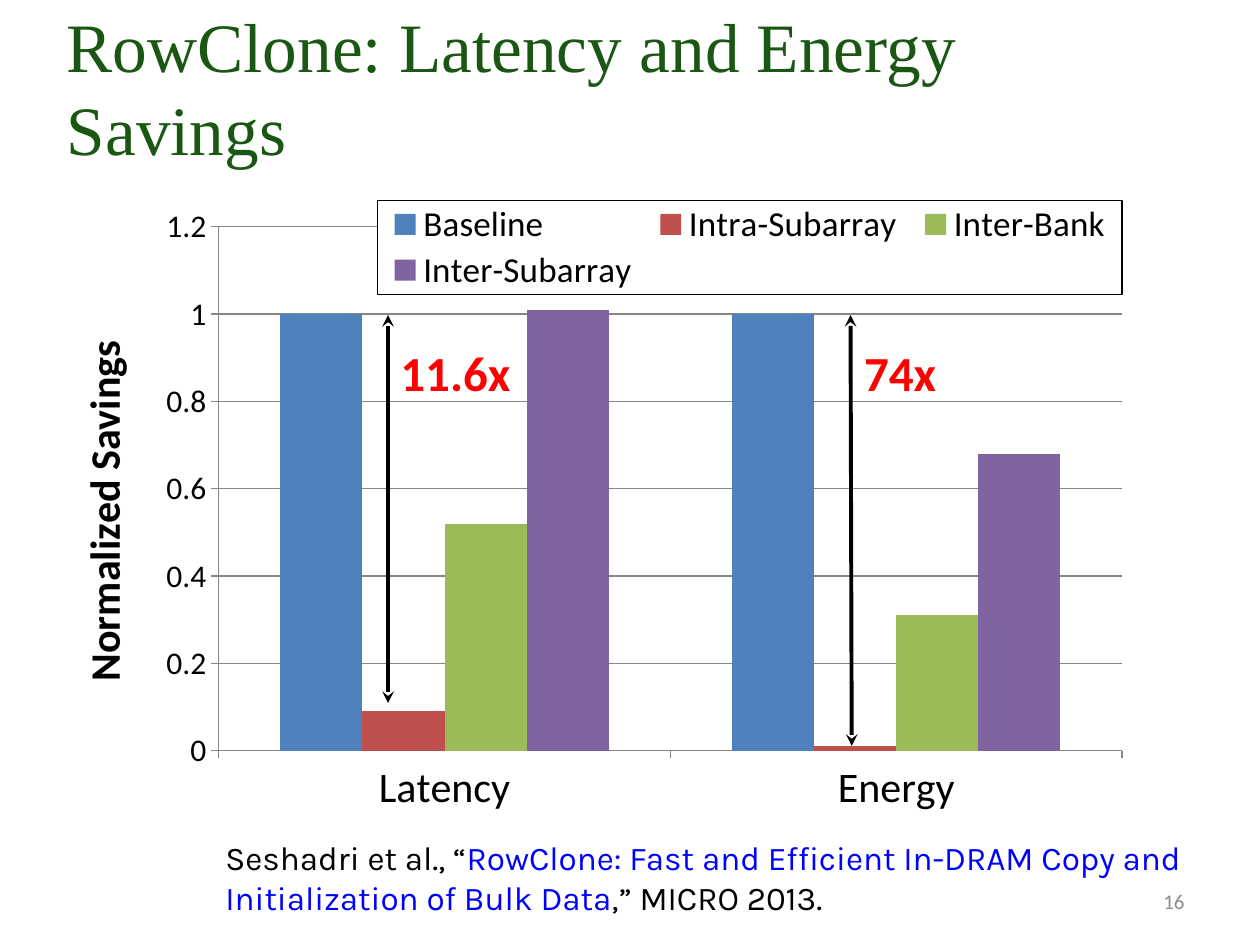
from lxml.etree import SubElement
from pptx import Presentation
from pptx.chart.data import CategoryChartData
from pptx.dml.color import RGBColor
from pptx.enum.chart import XL_CHART_TYPE, XL_LEGEND_POSITION, XL_TICK_MARK
from pptx.enum.shapes import MSO_CONNECTOR
from pptx.enum.text import MSO_ANCHOR, MSO_AUTO_SIZE, PP_ALIGN
from pptx.oxml import parse_xml
from pptx.oxml.ns import nsdecls, qn
from pptx.util import Inches, Pt

COLORS = {
    "title": "1A5712", "text": "000000", "gain": "FF0000", "cite": "0000FF",
    "page": "8C8C8C", "grid": "868686", "Baseline": "4F81BD",
    "Intra-Subarray": "C0504D", "Inter-Bank": "9BBB59", "Inter-Subarray": "8064A2",
}
SAVINGS = {
    "Baseline": (1, 1), "Intra-Subarray": (0.09, 0.01),
    "Inter-Bank": (0.52, 0.31), "Inter-Subarray": (1.01, 0.68),
}


def tint(name):
    return RGBColor.from_string(COLORS[name])


def layout(x, y, wide, high, inner=False):
    target = '<c:layoutTarget val="inner"/>' if inner else ""
    return parse_xml(
        f'<c:layout {nsdecls("c")}><c:manualLayout>{target}'
        '<c:xMode val="edge"/><c:yMode val="edge"/>'
        f'<c:x val="{x}"/><c:y val="{y}"/><c:w val="{wide}"/><c:h val="{high}"/>'
        '</c:manualLayout></c:layout>')


class Deck:
    """Hold the style and the current slide, and add each kind of element."""

    face = "Calibri"

    def __init__(self):
        self.show = Presentation()
        self.show.slide_width, self.show.slide_height = Inches(10), Inches(7.5)
        self.slide = self.show.slides.add_slide(self.show.slide_layouts[5])

    def style(self, font, size, color="text", face=None, bold=False):
        font.size, font.name, font.bold = Pt(size), face or self.face, bold
        font.color.rgb = tint(color)

    def title(self, text, box):
        shape = self.slide.shapes.title
        shape.left, shape.top, shape.width, shape.height = map(Inches, box)
        frame = shape.text_frame
        frame.text = text
        frame.word_wrap = True
        frame.auto_size = MSO_AUTO_SIZE.NONE
        frame.vertical_anchor = MSO_ANCHOR.MIDDLE
        frame.paragraphs[0].alignment = PP_ALIGN.LEFT
        self.style(frame.paragraphs[0].runs[0].font, 39.6, "title", "Times New Roman")

    def label(self, parts, box, size, wrap=True, face=None, bold=False,
              align=PP_ALIGN.LEFT, anchor=MSO_ANCHOR.TOP):
        frame = self.slide.shapes.add_textbox(*map(Inches, box)).text_frame
        frame.word_wrap = wrap
        frame.vertical_anchor = anchor
        line = frame.paragraphs[0]
        line.alignment = align
        for text, color in parts:
            run = line.add_run()
            run.text = text
            self.style(run.font, size, color, face, bold)

    def arrow(self, start, end):
        line = self.slide.shapes.add_connector(
            MSO_CONNECTOR.STRAIGHT, *map(Inches, start + end))
        line.line.color.rgb = tint("text")
        line.line.width = Pt(2.25)
        stroke = line.line._get_or_add_ln()
        for tag in ("a:headEnd", "a:tailEnd"):
            SubElement(stroke, qn(tag), type="stealth")
        SubElement(line._element.spPr, qn("a:effectLst"))

    def axis(self, axis, size):
        self.style(axis.tick_labels.font, size)
        axis.major_tick_mark = XL_TICK_MARK.OUTSIDE
        axis.format.line.color.rgb = tint("grid")

    def legend(self, chart):
        chart.has_legend = True
        legend = chart.legend
        legend.position = XL_LEGEND_POSITION.RIGHT
        legend.include_in_layout = True
        self.style(legend.font, 20)
        root = legend._element
        for old in root.findall(qn("c:layout")):
            root.remove(old)
        root.find(qn("c:legendPos")).addnext(layout(0.283, 0.002, 0.669, 0.142))
        root.find(qn("c:txPr")).addprevious(parse_xml(
            f'<c:spPr {nsdecls("c", "a")}><a:solidFill><a:srgbClr val="FFFFFF"/>'
            f'</a:solidFill><a:ln w="9525"><a:solidFill><a:srgbClr val="{COLORS["text"]}"/>'
            '</a:solidFill></a:ln></c:spPr>'))

    def chart(self, cats, series, box):
        data = CategoryChartData()
        data.categories = cats
        for name, vals in series.items():
            data.add_series(name, vals)
        chart = self.slide.shapes.add_chart(
            XL_CHART_TYPE.COLUMN_CLUSTERED, *map(Inches, box), data).chart
        chart.has_title = False
        self.style(chart.font, 10)
        plot = chart.plots[0]
        plot.gap_width, plot.overlap, plot.vary_by_categories = 150, 0, False
        for bar in plot.series:
            bar.format.fill.solid()
            bar.format.fill.fore_color.rgb = tint(bar.name)
        area = chart._chartSpace.chart.plotArea
        for old in area.findall(qn("c:layout")):
            area.remove(old)
        area.insert(0, layout(0.14, 0.042, 0.812, 0.792, True))
        self.axis(chart.category_axis, 24)
        scale = chart.value_axis
        self.axis(scale, 18)
        scale.minimum_scale, scale.maximum_scale, scale.major_unit = 0, 1.2, 0.2
        scale.major_gridlines.format.line.color.rgb = tint("grid")
        frame = scale.axis_title.text_frame
        frame.text = "Normalized Savings"
        self.style(frame.paragraphs[0].runs[0].font, 24, bold=True)
        body = frame._txBody.find(qn("a:bodyPr"))
        body.set("rot", "-5400000")
        body.set("vert", "horz")
        self.legend(chart)


def main():
    deck = Deck()
    deck.title("RowClone: Latency and Energy Savings", (0.43, 0.06, 9, 1.25))
    deck.chart(("Latency", "Energy"), SAVINGS, (0.5, 1.58, 8.83, 5.25))
    for gain, top, foot, wide in (("11.6x", 3.08, (3.08, 5.58), 1.09),
                                  ("74x", 6.75, (6.76, 5.92), 0.78)):
        deck.arrow((top, 2.5), foot)
        deck.label([(gain, "gain")], (foot[0], 2.67, wide, 0.57), 28,
                   wrap=False, bold=True)
    deck.label([("16", "page")], (7.17, 6.95, 2.33, 0.4), 12,
               align=PP_ALIGN.RIGHT, anchor=MSO_ANCHOR.MIDDLE)
    deck.label([("Seshadri et al., “", "text"),
                ("RowClone: Fast and Efficient In-DRAM Copy and "
                 "Initialization of Bulk Data", "cite"),
                (",” MICRO 2013.", "text")],
               (1.69, 6.6, 8.58, 0.74), 19, face="Karla")
    deck.show.save("out.pptx")


if __name__ == "__main__":
    main()
